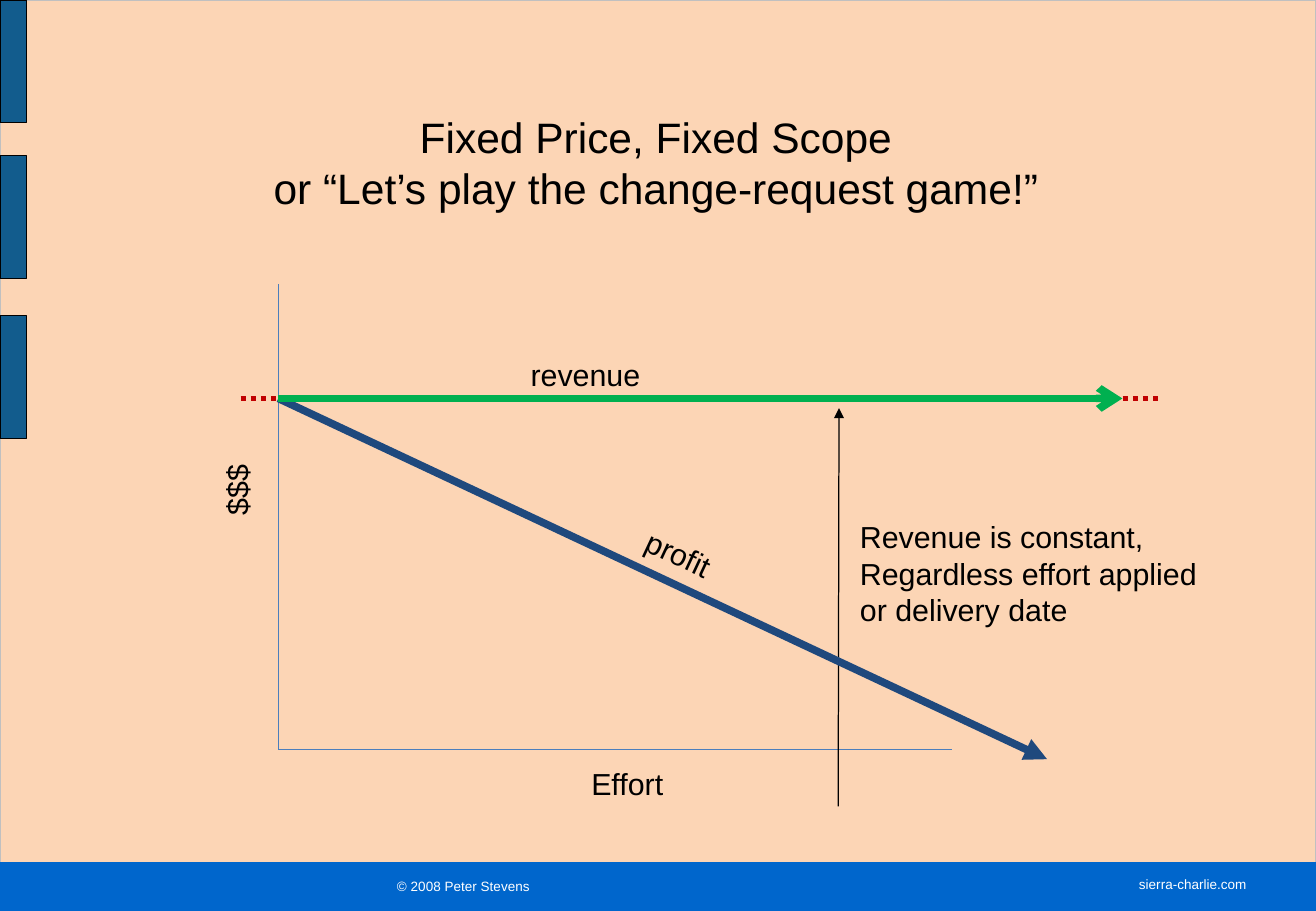
from dataclasses import dataclass

import pptx
import pptx.dml.color
import pptx.enum.dml
import pptx.enum.shapes
import pptx.enum.text
import pptx.oxml.ns
import pptx.oxml.xmlchemy
import pptx.util

Pt = pptx.util.Pt
Align = pptx.enum.text.PP_ALIGN
Anchor = pptx.enum.text.MSO_ANCHOR
Fit = pptx.enum.text.MSO_AUTO_SIZE
Dash = pptx.enum.dml.MSO_LINE
Element = pptx.oxml.xmlchemy.OxmlElement

WIDTH, HEIGHT = 780, 540
ORIGIN_X, REVENUE_Y, EFFORT_Y = 165, 236.2, 444.2
NO_TABLE_STYLE = "{2D5ABB26-0587-4C30-8999-92F81FD0307C}"


@dataclass
class Block:
    left: float
    top: float
    width: float
    height: float
    fill: str
    line: str


@dataclass
class Stroke:
    start: tuple[float, float]
    end: tuple[float, float]
    colour: str
    weight: float
    tail: str = ""
    dash: Dash = Dash.SOLID


@dataclass
class Label:
    text: str
    left: float
    top: float
    width: float
    height: float = 29
    rotation: float = 0


BLOCKS = [Block(0, 0, WIDTH, 528.5, "FCD5B5", "C0C0C0")] + [
    Block(0, top, 15.8, 72.7, "125C8D", "000000") for top in (0, 92.2, 187.2)
]
STROKES = [
    Stroke((ORIGIN_X, EFFORT_Y), (564.5, EFFORT_Y), "4B7EBC", 0.75),
    Stroke((ORIGIN_X, 168.5), (ORIGIN_X, EFFORT_Y), "4B7EBC", 0.75),
    Stroke((142.6, REVENUE_Y), (688.3, REVENUE_Y), "C00000", 3, dash=Dash.ROUND_DOT),
    Stroke((496.8, 478), (497.3, 241.9), "000000", 0.75, "triangle"),
    Stroke((ORIGIN_X, REVENUE_Y), (620.6, 450), "1F497D", 4.5, "triangle"),
    Stroke((ORIGIN_X, REVENUE_Y), (665.3, REVENUE_Y), "00B050", 4.5, "arrow"),
]
LABELS = [
    Label("Effort", 343.4, 450, 57.6),
    Label("$$$", 118.1, 275.8, 44.6, rotation=270),
    Label("Revenue is constant,\nRegardless effort applied \vor delivery date",
          502.6, 303.8, 221, 72.7),
    Label("revenue", 307.4, 207.4, 79.9),
    Label("profit", 375.1, 313.9, 54.7, rotation=25),
]
FOOTER_COLUMNS = [31.7, 42.5, 68.4, 264.2, 244.1, 112.3, 18]
FOOTER_TEXTS = {3: ("© 2008 Peter Stevens", 3.6), 5: ("sierra-charlie.com", 0.7)}


def rgb(colour: str) -> pptx.dml.color.RGBColor:
    return pptx.dml.color.RGBColor.from_string(colour)


def apply(target, values: dict) -> None:
    for name, value in values.items():
        setattr(target, name, value)


def write(frame, text: str, size: float, colour: str, align=Align.LEFT) -> None:
    frame.text = text
    for para in frame.paragraphs:
        para.alignment = align
        for span in para.runs:
            apply(span.font, {"name": "Arial", "size": Pt(size)})
            span.font.color.rgb = rgb(colour)


def draw_block(page, block: Block) -> None:
    shape = page.shapes.add_shape(
        pptx.enum.shapes.MSO_SHAPE.RECTANGLE,
        Pt(block.left), Pt(block.top), Pt(block.width), Pt(block.height))
    shape.shadow.inherit = False
    shape.fill.solid()
    shape.fill.fore_color.rgb = rgb(block.fill)
    shape.line.color.rgb = rgb(block.line)
    shape.line.width = Pt(0.75)


def draw_stroke(page, stroke: Stroke) -> None:
    connector = page.shapes.add_connector(
        pptx.enum.shapes.MSO_CONNECTOR.STRAIGHT,
        *map(Pt, stroke.start), *map(Pt, stroke.end))
    connector.line.color.rgb = rgb(stroke.colour)
    apply(connector.line, {"width": Pt(stroke.weight), "dash_style": stroke.dash})
    if stroke.tail:
        tail = Element("a:tailEnd")
        tail.set("type", stroke.tail)
        connector.line._get_or_add_ln().append(tail)
    connector._element.spPr.append(Element("a:effectLst"))


def draw_label(page, label: Label) -> None:
    box = page.shapes.add_textbox(
        Pt(label.left), Pt(label.top), Pt(label.width), Pt(label.height))
    box.rotation = label.rotation
    apply(box.text_frame, {"word_wrap": False, "auto_size": Fit.SHAPE_TO_FIT_TEXT})
    write(box.text_frame, label.text, 18, "000000")


def draw_footer(page) -> None:
    table = page.shapes.add_table(
        1, len(FOOTER_COLUMNS), Pt(0), Pt(511.2), Pt(sum(FOOTER_COLUMNS)), Pt(28.8)).table
    table._tbl.tblPr.find(pptx.oxml.ns.qn("a:tableStyleId")).text = NO_TABLE_STYLE
    for index, width in enumerate(FOOTER_COLUMNS):
        table.columns[index].width = Pt(width)
        cell = table.cell(0, index)
        cell.fill.solid()
        cell.fill.fore_color.rgb = rgb("0066CC")
        text, top = FOOTER_TEXTS.get(index, ("", 0))
        apply(cell, {"vertical_anchor": Anchor.MIDDLE, "margin_top": Pt(top),
                     "margin_bottom": Pt(3.6 if text else 0)})
        if text:
            write(cell.text_frame, text, 8, "FFFFFF", Align.CENTER)


def place_title(page) -> None:
    title = page.shapes.title
    page.shapes._spTree.append(title._element)  # bring in front of the backdrop
    apply(title, {"left": Pt(36.7), "top": Pt(67.7), "width": Pt(704.2), "height": Pt(56.2)})
    apply(title.text_frame, {"vertical_anchor": Anchor.MIDDLE, "auto_size": Fit.NONE,
                             "word_wrap": True})
    write(title.text_frame, "Fixed Price, Fixed Scope\vor “Let’s play the change-request game!”",
          25.2, "000000", Align.CENTER)


def main() -> None:
    deck = pptx.Presentation()
    apply(deck, {"slide_width": Pt(WIDTH), "slide_height": Pt(HEIGHT)})
    page = deck.slides.add_slide(deck.slide_layouts[5])

    # Backdrop, side bars and footer
    for block in BLOCKS:
        draw_block(page, block)
    draw_footer(page)

    place_title(page)

    # Revenue and profit diagram
    for stroke in STROKES:
        draw_stroke(page, stroke)
    for label in LABELS:
        draw_label(page, label)

    deck.save("out.pptx")


if __name__ == "__main__":
    main()
